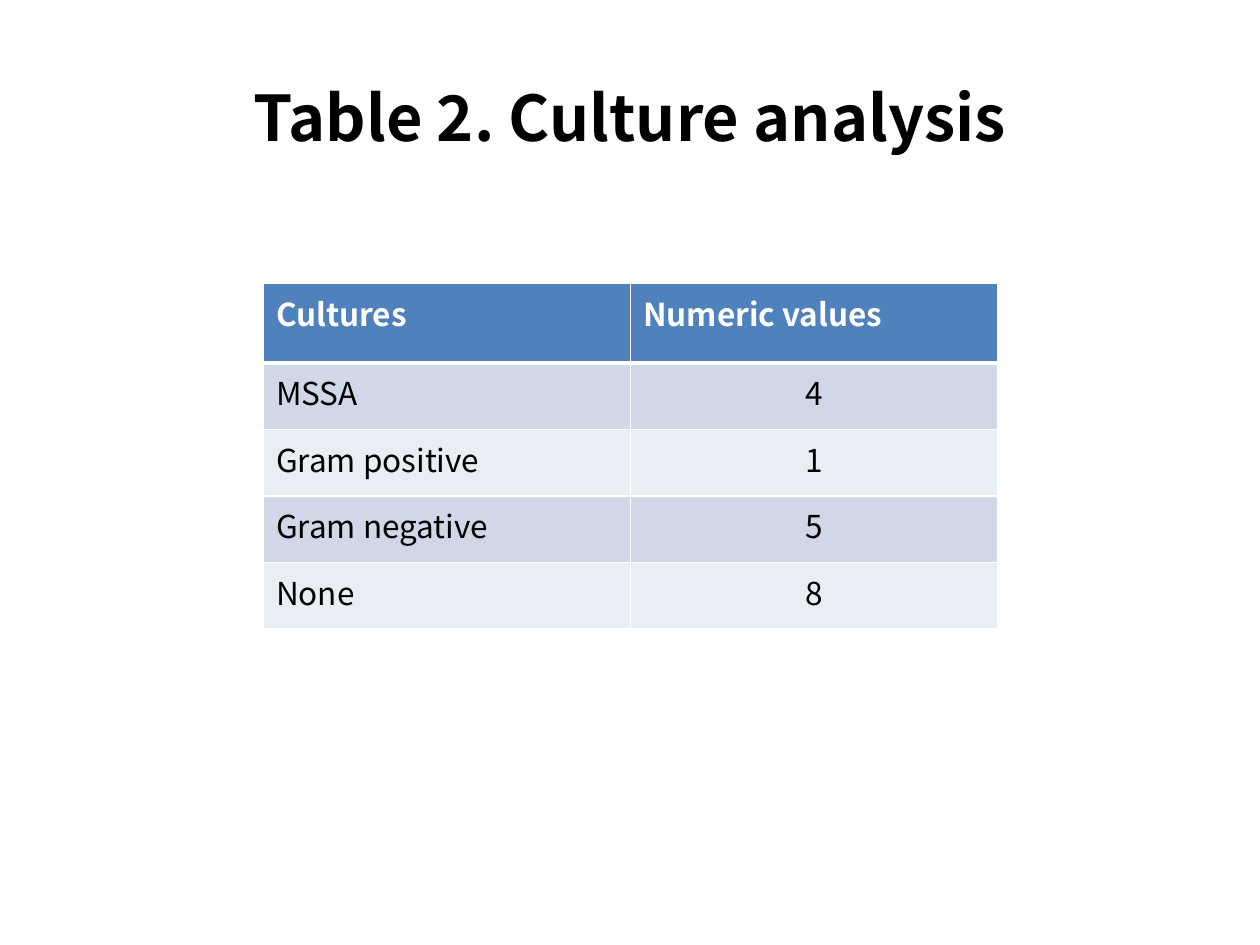
from lxml import etree
from pptx import Presentation
from pptx.dml.color import RGBColor
from pptx.enum import text
from pptx.oxml import ns
from pptx.util import Cm, Pt

FONT = "Noto Sans CJK KR"
COLORS = {
    "text": "000000",
    "white": "FFFFFF",
    "header": "4F81BD",
    "band_dark": "D0D8E8",
    "band_light": "E9EDF4",
}
CULTURES = [
    ("Cultures", "Numeric values"),
    ("MSSA", "4"),
    ("Gram positive", "1"),
    ("Gram negative", "5"),
    ("None", "8"),
]


def write_text(tf, content, size=18, bold=False, color="text",
               align=text.PP_ALIGN.LEFT):
    p = tf.paragraphs[0]
    p.alignment = align
    r = p.add_run()
    r.text = content
    r.font.name = FONT
    r.font.size = Pt(size)
    r.font.bold = bold
    r.font.color.rgb = RGBColor.from_string(COLORS[color])


def set_border(cell, side, width):
    tc_pr = cell._tc.get_or_add_tcPr()
    ln = etree.SubElement(tc_pr, ns.qn(f"a:ln{side}"), w=str(Pt(width)))
    fill = etree.SubElement(ln, ns.qn("a:solidFill"))
    etree.SubElement(fill, ns.qn("a:srgbClr"), val=COLORS["white"])


def add_title(s, content):
    title = s.shapes.title
    title.left, title.top = Cm(1.27), Cm(0.76)
    title.width, title.height = Cm(22.86), Cm(3.18)
    tf = title.text_frame
    tf.vertical_anchor = text.MSO_ANCHOR.MIDDLE
    write_text(tf, content, size=36, bold=True, align=text.PP_ALIGN.CENTER)


def format_cell(cell, content, row, col):
    is_header = row == 0
    # Thick rule between the header and the body
    widths = {"L": 1, "R": 1, "T": 3 if row == 1 else 1, "B": 3 if is_header else 1}
    for side, width in widths.items():
        set_border(cell, side, width)
    band = "header" if is_header else "band_dark" if row % 2 else "band_light"
    cell.fill.solid()
    cell.fill.fore_color.rgb = RGBColor.from_string(COLORS[band])
    centred = col == 1 and not is_header
    write_text(cell.text_frame, content, bold=is_header,
               color="white" if is_header else "text",
               align=text.PP_ALIGN.CENTER if centred else text.PP_ALIGN.LEFT)


def add_culture_table(s, rows):
    table = s.shapes.add_table(len(rows), len(rows[0]), Cm(5.31), Cm(5.72),
                               Cm(14.8), Cm(6.96)).table
    for column in table.columns:
        column.width = Cm(7.4)
    for i, values in enumerate(rows):
        table.rows[i].height = Cm(1.6 if i == 0 else 1.34)
        for j, value in enumerate(values):
            format_cell(table.cell(i, j), value, i, j)


def main():
    prs = Presentation()
    prs.slide_width, prs.slide_height = Cm(25.4), Cm(19.05)
    s = prs.slides.add_slide(prs.slide_layouts[5])  # Title Only
    add_title(s, "Table 2. Culture analysis")
    add_culture_table(s, CULTURES)
    prs.save("out.pptx")


if __name__ == "__main__":
    main()
